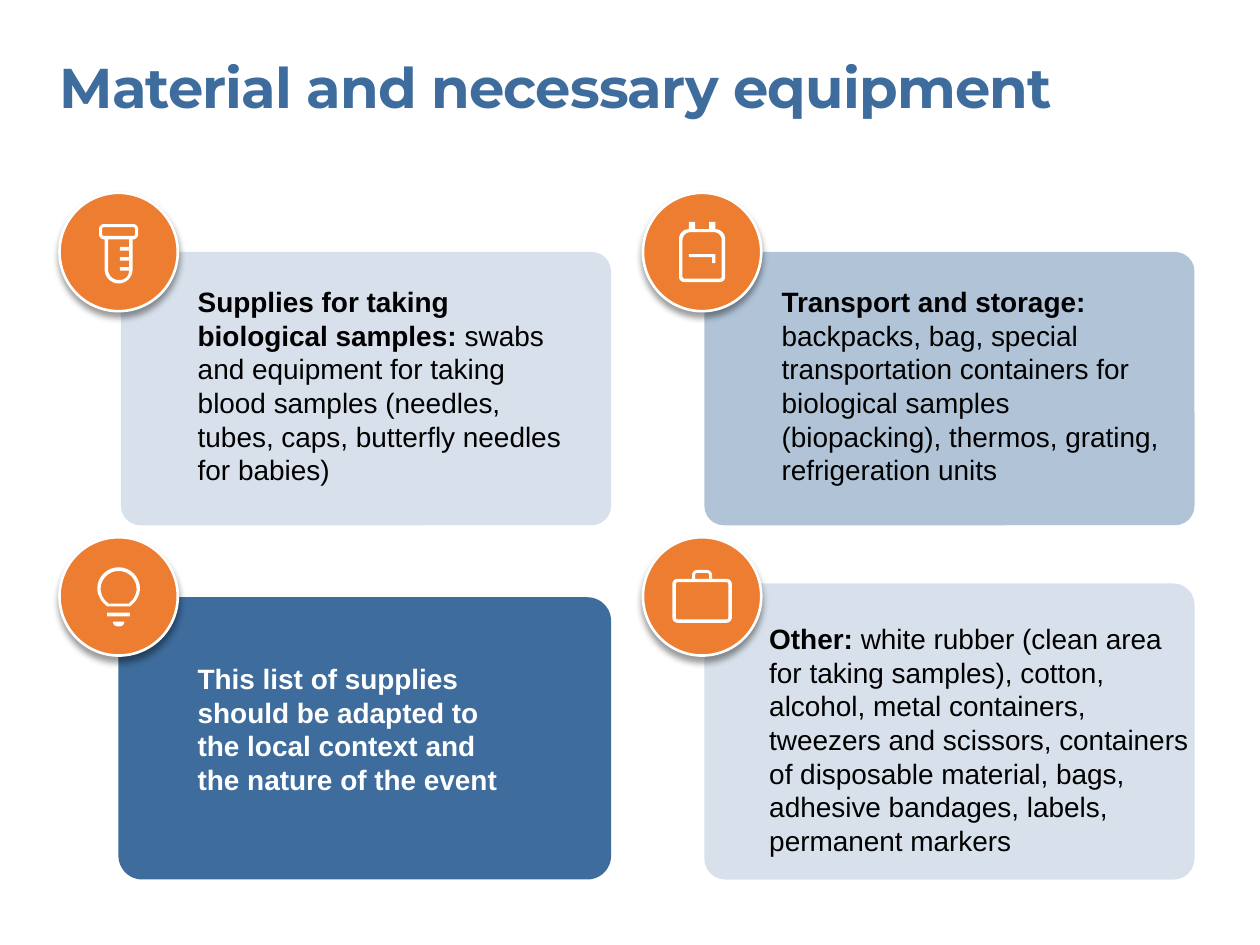
"""Build the slide on material and necessary equipment."""
from lxml.etree import SubElement as Sub
from pptx import Presentation
from pptx.dml.color import RGBColor as RGB
from pptx.enum.shapes import MSO_SHAPE as Kind
from pptx.enum.text import MSO_AUTO_SIZE as Fit
from pptx.oxml.ns import qn
from pptx.util import Pt

BLUE, ORANGE, WHITE, BLACK = "3D6C9D", "ED7D31", "FFFFFF", "000000"
HEAD = {"name": "Montserrat", "size": Pt(32), "bold": True}
BOLD = {"name": "Arial", "size": Pt(16), "bold": True}
BODY = {**BOLD, "bold": False}
TITLE = ((34, 30.2, 615.6, 39), [("Material and necessary equipment", HEAD)], BLUE)


def box(x, top, low, *radii):
    """Return the four corners of a centred box."""
    a, b = radii
    return [(-x, top, a), (x, top, a), (x, low, b), (-x, low, b)]


TUBE = [
    [(-11.2, -16, 3), (11.2, -16, 3), (11.2, -7.2, 3), (8, -7.2, 0),
     (8, 18, 8), (-8, 18, 8), (-8, -7.2, 0), (-11.2, -7.2, 3)],
    box(9.4, -14.2, -9.2, 1, 1),
    [(-6, -7.2, 0), (6, -7.2, 0)]
    + [(x, y + dy, 0) for y in (-2.9, 2.9, 8.6)
       for x, dy in ((6, 0), (0.8, 0), (0.8, 2.1), (6, 2.1))]
    + [(6, 16, 5.2), (-6, 16, 6)],
]
PACK = [
    [(-13.2, -13, 5.6), (-7.6, -13, 0), (-7.6, -17.2, 0), (-4, -17.2, 0),
     (-4, -13, 0), (4, -13, 0), (4, -17.2, 0), (7.6, -17.2, 0),
     (7.6, -13, 0), (13.2, -13, 5.6), (13.2, 17.2, 3), (-13.2, 17.2, 3)],
    box(11.2, -11.3, 15.2, 4.5, 1),
    [(-7.6, 1.2, 0), (7.6, 1.2, 0), (7.6, 6.4, 0), (5.8, 6.4, 0),
     (5.8, 3, 0), (-7.6, 3, 0)],
]
BULB = [
    box(3.3, 14.4, 17.2, 0, 2.8),
    box(6.5, 9.4, 11.5, 0, 0),
    [(-12.2, -16.6, 12.2), (12.2, -16.6, 12.2), (12.2, 0.6, 5),
     (6.5, 5.8, 0), (-6.5, 5.8, 0), (-12.2, 0.6, 5)],
    [(-10.3, -14.5, 10.3), (10.3, -14.5, 10.3), (10.3, -0.2, 4),
     (5.8, 4.2, 0), (-5.8, 4.2, 0), (-10.3, -0.2, 4)],
]
CASE = [
    [(-17, -10, 3), (-5.7, -10, 0), (-5.7, -15.1, 3), (5.7, -15.1, 3),
     (5.7, -10, 0), (17, -10, 3), (17, 15.1, 3), (-17, 15.1, 3)],
    box(15, -8.1, 13.1, 1, 1),
    box(4, -13.4, -10, 1.2, 0),
]

CARDS = [
    {"box": (69.1, 144, 280.1, 156.2), "bend": 0.071, "fill": BLUE, "alpha": 20,
     "disc": (34, 110.2), "icon": TUBE, "ink": BLACK, "area": (113, 162.7, 210.2, 116.6),
     "text": [("Supplies for taking biological samples: ", BOLD),
              ("swabs and equipment for taking blood samples (needles, tubes, "
               "caps, butterfly needles for babies)", BODY)]},
    {"box": (402.5, 144, 280.1, 156.2), "bend": 0.071, "fill": BLUE, "alpha": 40,
     "disc": (367.4, 110.2), "icon": PACK, "ink": BLACK, "area": (446.6, 162.7, 221.8, 116.6),
     "text": [("Transport and storage: ", BOLD),
              ("backpacks, bag, special transportation containers for biological "
               "samples (biopacking), thermos, grating, refrigeration units", BODY)]},
    {"box": (67.7, 341.3, 281.5, 161.3), "bend": 0.084, "fill": BLUE, "alpha": 100,
     "disc": (34, 307), "icon": BULB, "ink": WHITE, "area": (113, 378, 175.7, 77.8),
     "text": [("This list of supplies should be adapted to the local context "
               "and the nature of the event", BOLD)]},
    {"box": (402.5, 333.4, 280.1, 169.2), "bend": 0.071, "fill": BLUE, "alpha": 20,
     "disc": (367.4, 307), "icon": CASE, "ink": BLACK, "area": (439.6, 355.3, 239.8, 135.4),
     "text": [("Other: ", BOLD),
              ("white rubber (clean area for taking samples), cotton, alcohol, "
               "metal containers, tweezers and scissors, containers of disposable "
               "material, bags, adhesive bandages, labels, permanent markers", BODY)]},
]
DISC = 67.6


def tint(part, hue):
    """Give a fill a solid colour."""
    part.solid()
    part.fore_color.rgb = RGB.from_string(hue)


def plain(shape, hue):
    """Fill a shape and drop its line and shadow."""
    shape.shadow.inherit = False
    tint(shape.fill, hue)
    shape.line.fill.background()


def form(kind, area, hue):
    """Add a preset shape."""
    shape = page.shapes.add_shape(kind, *map(Pt, area))
    plain(shape, hue)
    return shape


def write(area, runs, hue):
    """Add a text box and return its runs."""
    frame = page.shapes.add_textbox(*map(Pt, area)).text_frame
    look = {"word_wrap": True, "auto_size": Fit.SHAPE_TO_FIT_TEXT}
    look |= {f"margin_{side}": 0 for side in ("left", "top", "right", "bottom")}
    for key, val in look.items():
        setattr(frame, key, val)
    for words, face in runs:
        run = frame.paragraphs[0].add_run()
        run.text = words
        for key, val in face.items():
            setattr(run.font, key, val)
        run.font.color.rgb = RGB.from_string(hue)
    return frame.paragraphs[0].runs


def bend(nodes, steps=8):
    """Round each corner of an outline by its radius."""
    dots = []
    for i, (x, y, rad) in enumerate(nodes):
        if not rad:
            dots.append((x, y))
            continue
        ends = []
        for nx, ny, _ in (nodes[i - 1], nodes[(i + 1) % len(nodes)]):
            part = rad / ((nx - x) ** 2 + (ny - y) ** 2) ** 0.5
            ends.append((x + (nx - x) * part, y + (ny - y) * part))
        (ax, ay), (bx, by) = ends
        for t in (n / steps for n in range(steps + 1)):
            u = 1 - t
            a = u ** 3 + 1.35 * u * u * t
            b = t ** 3 + 1.35 * u * t * t
            c = 1 - a - b
            dots.append((a * ax + b * bx + c * x, a * ay + b * by + c * y))
    return dots


def draw(icon, cx, cy):
    """Draw an icon as one freeform around a centre."""
    pen = None
    for nodes in icon:
        dots = [(Pt(cx + x), Pt(cy + y)) for x, y in bend(nodes)]
        if pen:
            pen.move_to(*dots[0])
        else:
            pen = page.shapes.build_freeform(*dots[0])
        pen.add_line_segments(dots[1:], close=True)
    plain(pen.convert_to_shape(), WHITE)


def badge(x, y, icon):
    """Add a shadowed disc with its icon."""
    disc = form(Kind.OVAL, (x, y, DISC, DISC), ORANGE)
    tint(disc.line.fill, WHITE)
    disc.line.width = Pt(1.5)
    glow = Sub(disc._element.spPr.find(qn("a:effectLst")), qn("a:outerShdw"),
               blurRad=str(Pt(4)), dist=str(Pt(3)), dir="5400000",
               algn="ctr", rotWithShape="0")
    Sub(Sub(glow, qn("a:srgbClr"), val=BLACK), qn("a:alpha"), val="40000")
    draw(icon, x + DISC / 2, y + DISC / 2)


deck = Presentation()
deck.slide_width, deck.slide_height = Pt(720), Pt(540)
page = deck.slides.add_slide(deck.slide_layouts[6])
write(*TITLE)[0]._r.get_or_add_rPr().set("spc", "-50")
for card in CARDS:
    panel = form(Kind.ROUNDED_RECTANGLE, card["box"], card["fill"])
    panel.adjustments[0] = card["bend"]
    if card["alpha"] < 100:
        hue = panel._element.spPr.find(qn("a:solidFill"))[0]
        Sub(hue, qn("a:alpha"), val=str(card["alpha"] * 1000))
    write(card["area"], card["text"], card["ink"])
    badge(*card["disc"], card["icon"])
deck.save("out.pptx")
